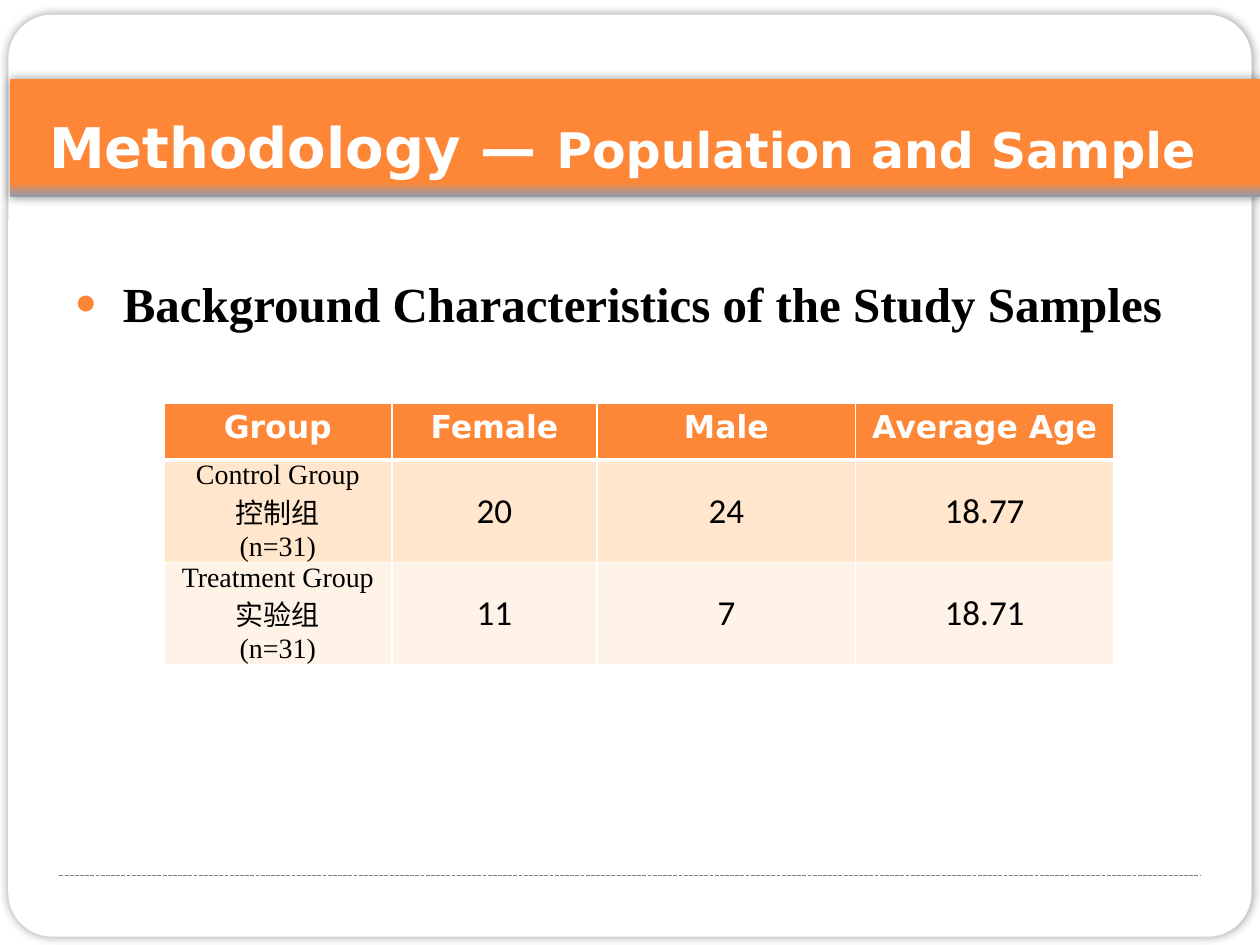
"""Build the slide on the population and sample of the study."""
from dataclasses import dataclass

from lxml import etree
from pptx import Presentation
from pptx.dml.color import RGBColor
from pptx.enum.dml import MSO_LINE
from pptx.enum.shapes import MSO_CONNECTOR, MSO_SHAPE
from pptx.enum.text import MSO_ANCHOR, MSO_AUTO_SIZE, PP_ALIGN
from pptx.oxml.ns import qn
from pptx.util import Pt

RECTANGLE, ROUNDED = MSO_SHAPE.RECTANGLE, MSO_SHAPE.ROUNDED_RECTANGLE
STRAIGHT, DASHED = MSO_CONNECTOR.STRAIGHT, MSO_LINE.SQUARE_DOT
LEFT, CENTER = PP_ALIGN.LEFT, PP_ALIGN.CENTER
TOP, MIDDLE = MSO_ANCHOR.TOP, MSO_ANCHOR.MIDDLE
FIXED_SIZE = MSO_AUTO_SIZE.NONE


@dataclass(frozen=True)
class Theme:
    accent: str = "FE8637"
    band_edge: str = "8E9BB0"
    white: str = "FFFFFF"
    black: str = "000000"
    rule: str = "808080"
    row_fills: tuple = ("FFE6CC", "FFF3E7")
    heading_font: str = "DejaVu Sans"
    text_font: str = "Times New Roman"
    number_font: str = "Calibri"
    chinese_font: str = "Arial"
    title_size: int = 32
    subtitle_size: int = 28
    bullet_size: int = 28
    header_size: int = 18
    label_size: int = 16
    number_size: int = 20


def color(value):
    return RGBColor.from_string(value)


def add_child(parent, tag, **attributes):
    return etree.SubElement(parent, qn(tag), {key: str(value) for key, value in attributes.items()})


def add_text(para, text, font, size, ink, bold=False, align=LEFT):
    para.alignment = align
    span = para.add_run()
    span.text = text
    span.font.name = font
    span.font.size = Pt(size)
    span.font.bold = bold
    span.font.color.rgb = color(ink)


class SlideBuilder:
    def __init__(self, slide, theme):
        self.slide = slide
        self.theme = theme

    def placeholder(self, holder, left, top, width, height):
        holder.left, holder.top, holder.width, holder.height = map(Pt, (left, top, width, height))
        self.slide.shapes.element.append(holder.element)
        frame = holder.text_frame
        frame.margin_left = frame.margin_top = frame.margin_right = frame.margin_bottom = 0
        frame.auto_size = FIXED_SIZE
        frame.vertical_anchor = TOP
        frame.word_wrap = True
        para = frame.paragraphs[0]
        para.space_before = Pt(0)
        return para

    def title(self, lead, subtitle, *place):
        theme = self.theme
        para = self.placeholder(self.slide.shapes.title, *place)
        for text, size in ((lead, theme.title_size), (subtitle, theme.subtitle_size)):
            add_text(para, text, theme.heading_font, size, theme.white, bold=True)

    def bullet(self, text, *place):
        theme = self.theme
        para = self.placeholder(self.slide.placeholders[1], *place)
        properties = para._p.get_or_add_pPr()
        properties.set("marL", str(Pt(27)))
        properties.set("indent", str(Pt(-27)))
        add_child(add_child(properties, "a:buClr"), "a:srgbClr", val=theme.accent)
        add_child(properties, "a:buSzPct", val=120000)
        add_child(properties, "a:buFont", typeface=theme.chinese_font)
        add_child(properties, "a:buChar", char="•")
        add_text(para, text, theme.text_font, theme.bullet_size, theme.black, bold=True)

    def box(self, kind, left, top, width, height):
        box = self.slide.shapes.add_shape(kind, *map(Pt, (left, top, width, height)))
        box.shadow.inherit = False
        effects = box.element.spPr.find(qn("a:effectLst"))
        shadow = add_child(effects, "a:outerShdw", blurRad=Pt(5), dist=0, dir=0, rotWithShape=0)
        shade = add_child(shadow, "a:srgbClr", val=self.theme.black)
        add_child(shade, "a:alpha", val=40000)
        return box

    def frame(self, *place):
        box = self.box(ROUNDED, *place)
        box.adjustments[0] = 0.046
        box.fill.solid()
        box.fill.fore_color.rgb = box.line.color.rgb = color(self.theme.white)
        box.line.width = Pt(2)

    def band(self, *place):
        box = self.box(RECTANGLE, *place)
        box.line.fill.background()
        box.fill.gradient()
        box.fill.gradient_angle = 270
        stops = ((0.88, self.theme.accent), (1, self.theme.band_edge))
        for stop, (position, shade) in zip(box.fill.gradient_stops, stops):
            stop.color.rgb = color(shade)
            stop.position = position

    def rule(self, left, right, height):
        line = self.slide.shapes.add_connector(STRAIGHT, Pt(left), Pt(height), Pt(right), Pt(height))
        line.line.color.rgb = color(self.theme.rule)
        line.line.width = Pt(0.75)
        line.line.dash_style = DASHED
        add_child(line.element.spPr, "a:effectLst")

    def cell(self, cell, lines, fill, edges, **text_format):
        cell.fill.solid()
        cell.fill.fore_color.rgb = color(fill)
        properties = cell._tc.get_or_add_tcPr()
        for position, (side, width) in enumerate(zip("LRTB", edges)):
            border = etree.Element(qn(f"a:ln{side}"), w=str(Pt(width)))
            add_child(add_child(border, "a:solidFill"), "a:srgbClr", val=self.theme.white)
            properties.insert(position, border)
        frame = cell.text_frame
        for index, (text, font) in enumerate(lines):
            para = frame.add_paragraph() if index else frame.paragraphs[0]
            add_text(para, text, font, align=CENTER, **text_format)

    def table(self, headers, records, left, top, widths, heights):
        theme = self.theme
        table = self.slide.shapes.add_table(
            len(heights), len(widths), Pt(left), Pt(top), Pt(sum(widths)), Pt(sum(heights))).table
        for column, width in zip(table.columns, widths):
            column.width = Pt(width)
        for row, height in zip(table.rows, heights):
            row.height = Pt(height)
        for index, header in enumerate(headers):
            self.cell(table.cell(0, index), [(header, theme.heading_font)], theme.accent,
                      (1, 1, 1, 3), size=theme.header_size, ink=theme.white, bold=True)
        fonts = (theme.text_font, theme.chinese_font, theme.text_font)
        for row, (record, fill) in enumerate(zip(records, theme.row_fills), start=1):
            label, *numbers = record
            contents = [list(zip(label, fonts))]
            contents += [[(number, theme.number_font)] for number in numbers]
            for index, lines in enumerate(contents):
                cell = table.cell(row, index)
                cell.vertical_anchor = MIDDLE
                cell.margin_left = cell.margin_right = Pt(5)
                cell.margin_top = cell.margin_bottom = 0
                size = theme.number_size if index else theme.label_size
                self.cell(cell, lines, fill, (1, 1, 3 if row == 1 else 1, 1), size=size, ink=theme.black)


def main():
    deck = Presentation()
    deck.slide_width, deck.slide_height = Pt(720), Pt(540)
    page = SlideBuilder(deck.slides.add_slide(deck.slide_layouts[1]), Theme())
    page.frame(5.76, 9.36, 708.48, 524.88)
    page.rule(34, 686, 500.4)
    page.band(5.76, 45, 714.24, 67.5)
    page.title("Methodology — ", "Population and Sample", 28, 64, 680, 40)
    page.bullet("Background Characteristics of the Study Samples", 43.2, 156.5, 670, 40)
    page.table(
        ("Group", "Female", "Male", "Average Age"),
        ((("Control Group", "控制组", "(n=31)"), "20", "24", "18.77"),
         (("Treatment Group", "实验组", "(n=31)"), "11", "7", "18.71")),
        93.6, 230.4, (130.3, 117.4, 147.6, 147.6), (32.4, 57.6, 57.6))
    deck.save("out.pptx")


if __name__ == "__main__":
    main()
